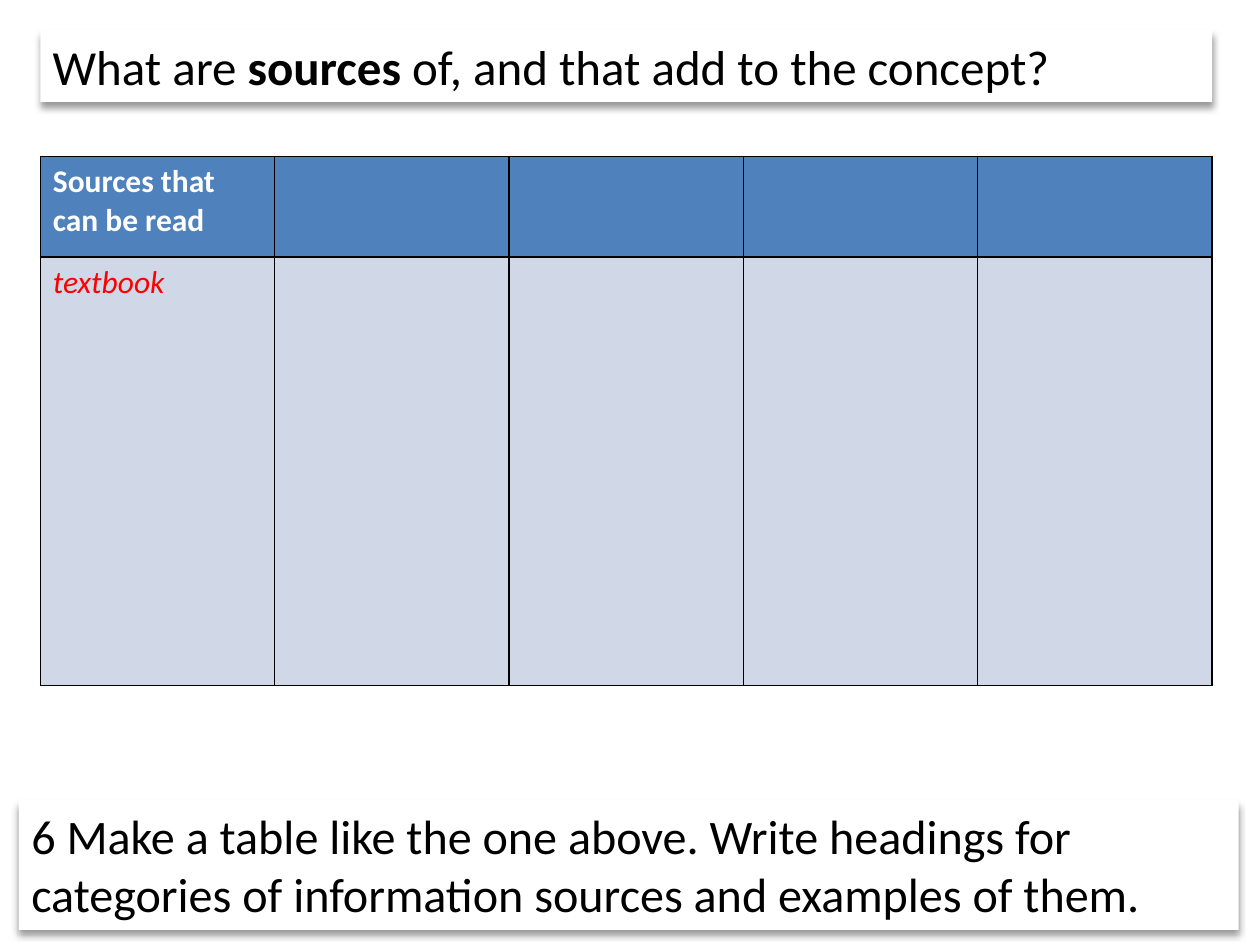
from pptx import Presentation
from pptx.dml.color import RGBColor
from pptx.enum.text import MSO_AUTO_SIZE
from pptx.oxml import parse_xml
from pptx.oxml.ns import nsdecls
from pptx.util import Inches, Pt

FIT_SHAPE = MSO_AUTO_SIZE.SHAPE_TO_FIT_TEXT
WHITE = RGBColor(0xFF, 0xFF, 0xFF)
BLACK = RGBColor(0, 0, 0)
RED = RGBColor(0xFF, 0, 0)
HEADER_BLUE = RGBColor(0x4F, 0x81, 0xBD)
BODY_BLUE = RGBColor(0xD0, 0xD8, 0xE8)
FONT = "Calibri"

SHADOW = (
    f'<a:effectLst {nsdecls("a")}>'
    '<a:outerShdw blurRad="50800" dist="38100" dir="5400000" algn="t" rotWithShape="0">'
    '<a:srgbClr val="000000"><a:alpha val="40000"/></a:srgbClr>'
    '</a:outerShdw></a:effectLst>'
)
BORDER = (
    '<a:{side} {ns} w="12700"><a:solidFill><a:srgbClr val="000000"/></a:solidFill>'
    '<a:prstDash val="solid"/></a:{side}>'
)


def style_run(run, size, color, bold=False, italic=False):
    run.font.name = FONT
    run.font.size = Pt(size)
    run.font.color.rgb = color
    run.font.bold = bold
    run.font.italic = italic


def add_panel(left, top, width, height, pieces, size):
    panel = slide.shapes.add_textbox(Inches(left), Inches(top), Inches(width), Inches(height))
    panel.fill.solid()
    panel.fill.fore_color.rgb = WHITE
    panel._element.spPr.append(parse_xml(SHADOW))
    panel.text_frame.word_wrap = True
    panel.text_frame.auto_size = FIT_SHAPE
    for wording, bold in pieces:
        run = panel.text_frame.paragraphs[0].add_run()
        run.text = wording
        style_run(run, size, BLACK, bold)


prs = Presentation()
prs.slide_width = Inches(10)
prs.slide_height = Inches(7.5)
slide = prs.slides.add_slide(prs.slide_layouts[6])

question = [("What are ", False), ("sources", True), (" of, and that add to the concept?", False)]
add_panel(0.32, 0.24, 9.3, 0.57, question, 28)

task = "6 Make a table like the one above. Write headings for categories of information sources and examples of them."
add_panel(0.15, 6.35, 9.68, 1.03, [(task, False)], 27.5)

sources = slide.shapes.add_table(2, 5, Inches(0.32), Inches(1.24), Inches(9.3), Inches(4.2)).table
for column in sources.columns:
    column.width = Inches(1.86)
for row, height, fill in zip(sources.rows, (0.8, 3.4), (HEADER_BLUE, BODY_BLUE)):
    row.height = Inches(height)
    for cell in row.cells:
        cell_properties = cell._tc.get_or_add_tcPr()
        for side in ("lnL", "lnR", "lnT", "lnB"):
            cell_properties.append(parse_xml(BORDER.format(side=side, ns=nsdecls("a"))))
        cell.fill.solid()
        cell.fill.fore_color.rgb = fill

heading = sources.cell(0, 0).text_frame
heading.text = "Sources that can be read"
style_run(heading.paragraphs[0].runs[0], 18, WHITE, bold=True)

example = sources.cell(1, 0).text_frame
example.text = "textbook"
style_run(example.paragraphs[0].runs[0], 18, RED, italic=True)

prs.save("out.pptx")
